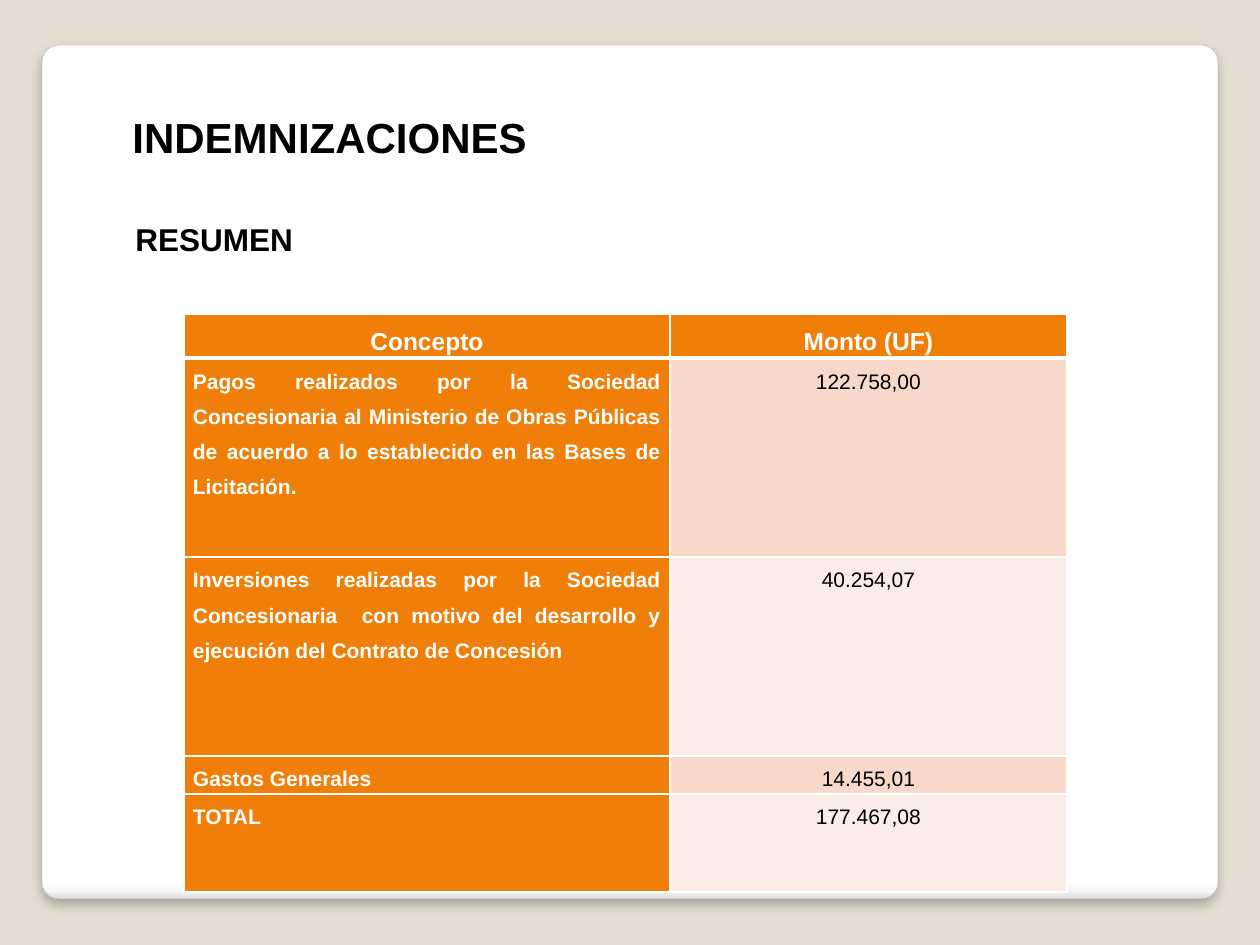
from pptx import Presentation
from pptx.dml.color import RGBColor
from pptx.enum.shapes import MSO_SHAPE as SHAPE
from pptx.enum.text import PP_ALIGN as ALIGN
from pptx.oxml import parse_xml
from pptx.oxml.ns import nsdecls
from pptx.util import Emu, Pt

SCALE = 914400 / 126
ORANGE, PINK, PALE = "F07F09", "F9D8CC", "FCECE7"
ROWS = [
    ("Concepto", "Monto (UF)"),
    ("Pagos realizados por la Sociedad Concesionaria al Ministerio de Obras "
     "Públicas de acuerdo a lo establecido en las Bases de Licitación.", "122.758,00"),
    ("Inversiones realizadas por la Sociedad Concesionaria  con motivo del "
     "desarrollo y ejecución del Contrato de Concesión", "40.254,07"),
    ("Gastos Generales", "14.455,01"),
    ("TOTAL", "177.467,08"),
]
COL_WIDTHS = [486, 397]
ROW_HEIGHTS = [42, 199, 199, 35, 98]


def px(n):
    return Emu(round(n * SCALE))


def color(code):
    return RGBColor.from_string(code)


def paint(sp, code):
    sp.fill.solid()
    sp.fill.fore_color.rgb = color(code)


def write(tf, text, size=12, fill="000000", bold=True, align=ALIGN.JUSTIFY,
          spacing=None, after=None):
    tf.word_wrap = True
    p = tf.paragraphs[0]
    p.alignment = align
    p.line_spacing = spacing
    p.space_after = after
    r = p.add_run()
    r.text = text
    r.font.name = "Arial"
    r.font.size = Pt(size)
    r.font.bold = bold
    r.font.color.rgb = color(fill)


def add_panel(s, x, y, w, h):
    sp = s.shapes.add_shape(SHAPE.ROUNDED_RECTANGLE, px(x), px(y), px(w), px(h))
    sp.adjustments[0] = 0.02
    sp.line.color.rgb = color("A4A4A4")
    sp.line.width = Pt(0.16)
    paint(sp, "FFFFFF")
    spPr = sp.fill._xPr
    stops = [(0, "FFFFFF"), (98, "FFFFFF"), (99, "F7F7F7"), (100, "DADADA")]
    gs = "".join(f'<a:gs pos="{pos * 1000}"><a:srgbClr val="{code}"/></a:gs>'
                 for pos, code in stops)
    spPr.replace(spPr.solidFill if hasattr(spPr, "solidFill") else spPr.eg_fillProperties,
                 parse_xml(f'<a:gradFill {nsdecls("a")} rotWithShape="1"><a:gsLst>{gs}</a:gsLst>'
                           '<a:lin ang="5400000" scaled="0"/></a:gradFill>'))
    spPr.append(parse_xml(
        f'<a:effectLst {nsdecls("a")}><a:outerShdw blurRad="{Pt(6)}" dist="{Pt(4)}" '
        'dir="5400000" algn="t" rotWithShape="0"><a:srgbClr val="000000">'
        '<a:alpha val="25000"/></a:srgbClr></a:outerShdw></a:effectLst>'))


def add_heading(s, x, y, w, h, text, size):
    sp = s.shapes.add_textbox(px(x), px(y), px(w), px(h))
    write(sp.text_frame, text, size)


def set_borders(cell, top, bottom):
    tcPr = cell._tc.get_or_add_tcPr()
    widths = {"lnL": 1, "lnR": 1, "lnT": top, "lnB": bottom}
    for i, (tag, width) in enumerate(widths.items()):
        tcPr.insert(i, parse_xml(
            f'<a:{tag} {nsdecls("a")} w="{Pt(width)}"><a:solidFill>'
            f'<a:srgbClr val="FFFFFF"/></a:solidFill></a:{tag}>'))


def add_summary(s, x, y):
    table = s.shapes.add_table(len(ROWS), len(COL_WIDTHS), px(x), px(y),
                               px(sum(COL_WIDTHS)), px(sum(ROW_HEIGHTS))).table
    for col, width in zip(table.columns, COL_WIDTHS):
        col.width = px(width)
    for row, height in zip(table.rows, ROW_HEIGHTS):
        row.height = px(height)
    for i, texts in enumerate(ROWS):
        for j, text in enumerate(texts):
            cell = table.cell(i, j)
            header, amount = i == 0, i > 0 and j == 1
            cell.margin_left = cell.margin_right = px(9)
            cell.margin_top = cell.margin_bottom = 0
            paint(cell, (PINK if i % 2 else PALE) if amount else ORANGE)
            set_borders(cell, 3 if i == 1 else 1, 3 if header else 1)
            write(cell.text_frame, text, 14 if header else 12,
                  "000000" if amount else "FFFFFF", not amount,
                  ALIGN.CENTER if header or amount else ALIGN.JUSTIFY, 1.5, Pt(10))


def main():
    prs = Presentation()
    prs.slide_width, prs.slide_height = px(1260), px(945)
    s = prs.slides.add_slide(prs.slide_layouts[6])
    paint(s.background, "E3DED1")
    add_panel(s, 42, 45, 1176, 854)
    add_heading(s, 123, 214, 1095, 616, "RESUMEN", 18)
    add_heading(s, 120, 105, 1012, 63, "INDEMNIZACIONES", 24)
    add_summary(s, 184, 314)
    prs.save("out.pptx")


if __name__ == "__main__":
    main()
